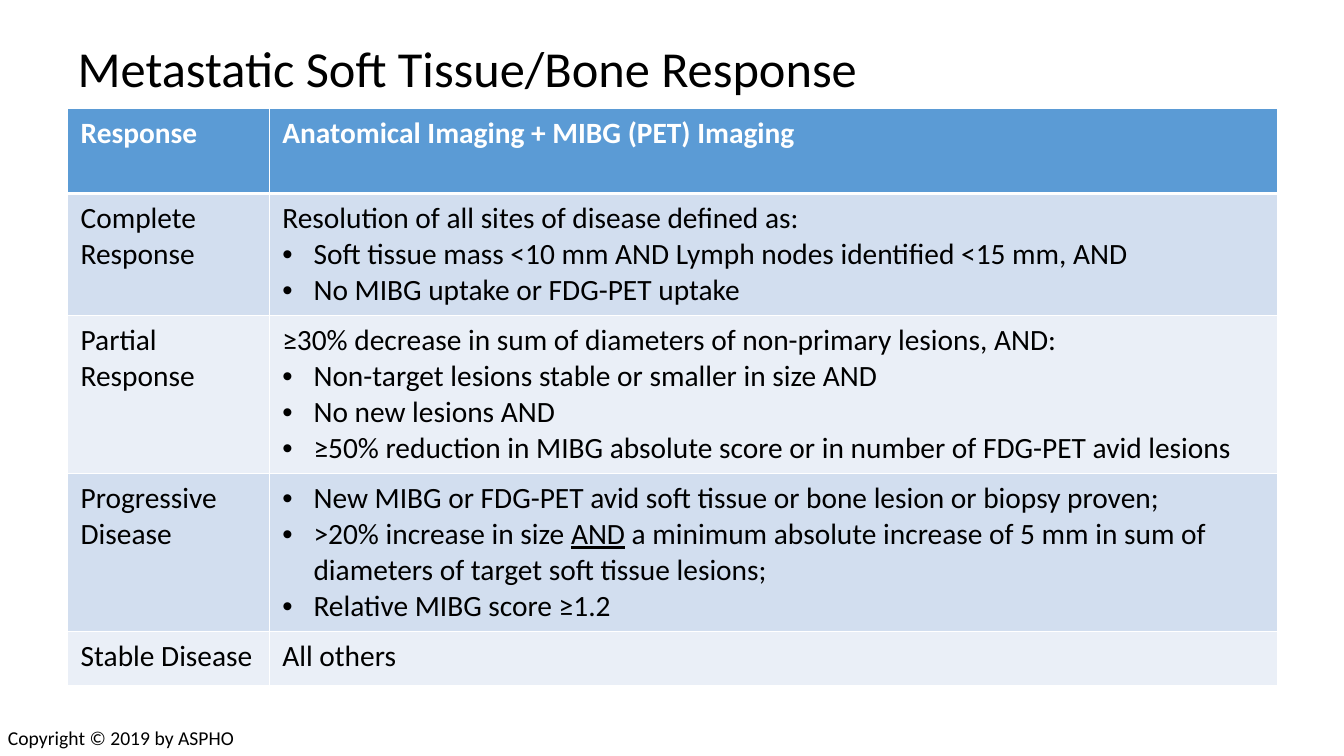
from lxml import etree
from pptx import Presentation
from pptx.dml.color import RGBColor
from pptx.enum.text import MSO_ANCHOR, PP_ALIGN
from pptx.oxml.ns import qn
from pptx.util import Inches, Pt

LEFT = PP_ALIGN.LEFT
MIDDLE = MSO_ANCHOR.MIDDLE
FONT = "Calibri"
BLACK, WHITE = "000000", "FFFFFF"
HEADER_FILL = "5B9BD5"
BAND_FILLS = ["D2DEEF", "EAEFF7"]
COLUMN_WIDTHS = [2, 10]
ROW_HEIGHTS = [0.84, 1.2, 1.56, 1.56, 0.54]
UNDERLINED = "AND"

# Each paragraph is (bulleted, list of text spans).
ROWS = [
    ("Response", [(False, ["Anatomical Imaging + MIBG (PET) Imaging"])]),
    ("Complete Response", [
        (False, ["Resolution of all sites of disease defined as:"]),
        (True, ["Soft tissue mass <10 mm AND Lymph nodes identified <15 mm, AND"]),
        (True, ["No MIBG uptake or FDG-PET uptake"]),
    ]),
    ("Partial Response", [
        (False, ["≥30% decrease in sum of diameters of non-primary lesions, AND:"]),
        (True, ["Non-target lesions stable or smaller in size AND"]),
        (True, ["No new lesions AND"]),
        (True, ["≥50% reduction in MIBG absolute score or in number of FDG-PET avid lesions"]),
    ]),
    ("Progressive Disease", [
        (True, ["New MIBG or FDG-PET avid soft tissue or bone lesion or biopsy proven;"]),
        (True, [">20% increase in size ", UNDERLINED,
                " a minimum absolute increase of 5 mm in sum of diameters of target soft tissue lesions;"]),
        (True, ["Relative MIBG score ≥1.2"]),
    ]),
    ("Stable Disease", [(False, ["All others"])]),
]


def color(value):
    """Return the colour for a hex string."""
    return RGBColor.from_string(value)


def add_span(para, text, size, ink=BLACK, bold=False):
    """Add one formatted run to a paragraph."""
    span = para.add_run()
    span.text = text
    span.font.name = FONT
    span.font.size = Pt(size)
    span.font.bold = bold
    span.font.color.rgb = color(ink)
    span.font.underline = text == UNDERLINED


def add_bullet(para):
    """Give a paragraph a hanging round bullet."""
    properties = para._p.get_or_add_pPr()
    properties.set("marL", str(Inches(0.31)))
    properties.set("indent", str(-Inches(0.31)))
    etree.SubElement(properties, qn("a:buFont"), typeface="Arial")
    etree.SubElement(properties, qn("a:buChar"), char="•")


def set_borders(cell, top, bottom):
    """Draw white cell borders with the given top and bottom widths."""
    properties = cell._tc.get_or_add_tcPr()
    sides = {"a:lnL": 1, "a:lnR": 1, "a:lnT": top, "a:lnB": bottom}
    for index, (side, width) in enumerate(sides.items()):
        line = etree.Element(qn(side), w=str(Pt(width)))
        fill = etree.SubElement(line, qn("a:solidFill"))
        etree.SubElement(fill, qn("a:srgbClr"), val=WHITE)
        properties.insert(index, line)


def fill_cell(cell, row, paragraphs):
    """Write and style one cell according to its row."""
    header = row == 0
    cell.margin_left = cell.margin_right = Inches(0.13)
    cell.margin_top = cell.margin_bottom = Inches(0.07)
    cell.fill.solid()
    cell.fill.fore_color.rgb = color(HEADER_FILL if header else BAND_FILLS[(row - 1) % 2])
    set_borders(cell, 3 if row == 1 else 1, 3 if header else 1)
    for index, (bulleted, spans) in enumerate(paragraphs):
        frame = cell.text_frame
        para = frame.add_paragraph() if index else frame.paragraphs[0]
        if bulleted:
            add_bullet(para)
        for text in spans:
            add_span(para, text, 21, WHITE if header else BLACK, header)


def add_title(page):
    """Place and write the title."""
    title = page.shapes.title
    title.left, title.top = Inches(0.67), Inches(0.08)
    title.width, title.height = Inches(12), Inches(1.25)
    title.text_frame.vertical_anchor = MIDDLE
    para = title.text_frame.paragraphs[0]
    para.alignment = LEFT
    para.line_spacing = 0.9
    add_span(para, "Metastatic Soft Tissue/Bone Response", 36)


def add_response_table(page):
    """Add the table of response criteria."""
    table = page.shapes.add_table(
        len(ROWS), len(COLUMN_WIDTHS), Inches(0.67), Inches(1.08),
        Inches(sum(COLUMN_WIDTHS)), Inches(sum(ROW_HEIGHTS))).table
    for column, width in zip(table.columns, COLUMN_WIDTHS):
        column.width = Inches(width)
    for row, (response, criteria) in enumerate(ROWS):
        table.rows[row].height = Inches(ROW_HEIGHTS[row])
        fill_cell(table.cell(row, 0), row, [(False, [response])])
        fill_cell(table.cell(row, 1), row, criteria)


def add_copyright(page):
    """Add the copyright line at the foot."""
    box = page.shapes.add_textbox(Inches(-0.02), Inches(7.15), Inches(3.4), Inches(0.34))
    box.text_frame.word_wrap = True
    add_span(box.text_frame.paragraphs[0], "Copyright © 2019 by ASPHO", 14)


def main():
    """Build and save the slide."""
    deck = Presentation()
    deck.slide_width, deck.slide_height = Inches(13.33), Inches(7.5)
    page = deck.slides.add_slide(deck.slide_layouts[5])
    add_title(page)
    add_response_table(page)
    add_copyright(page)
    deck.save("out.pptx")


if __name__ == "__main__":
    main()
